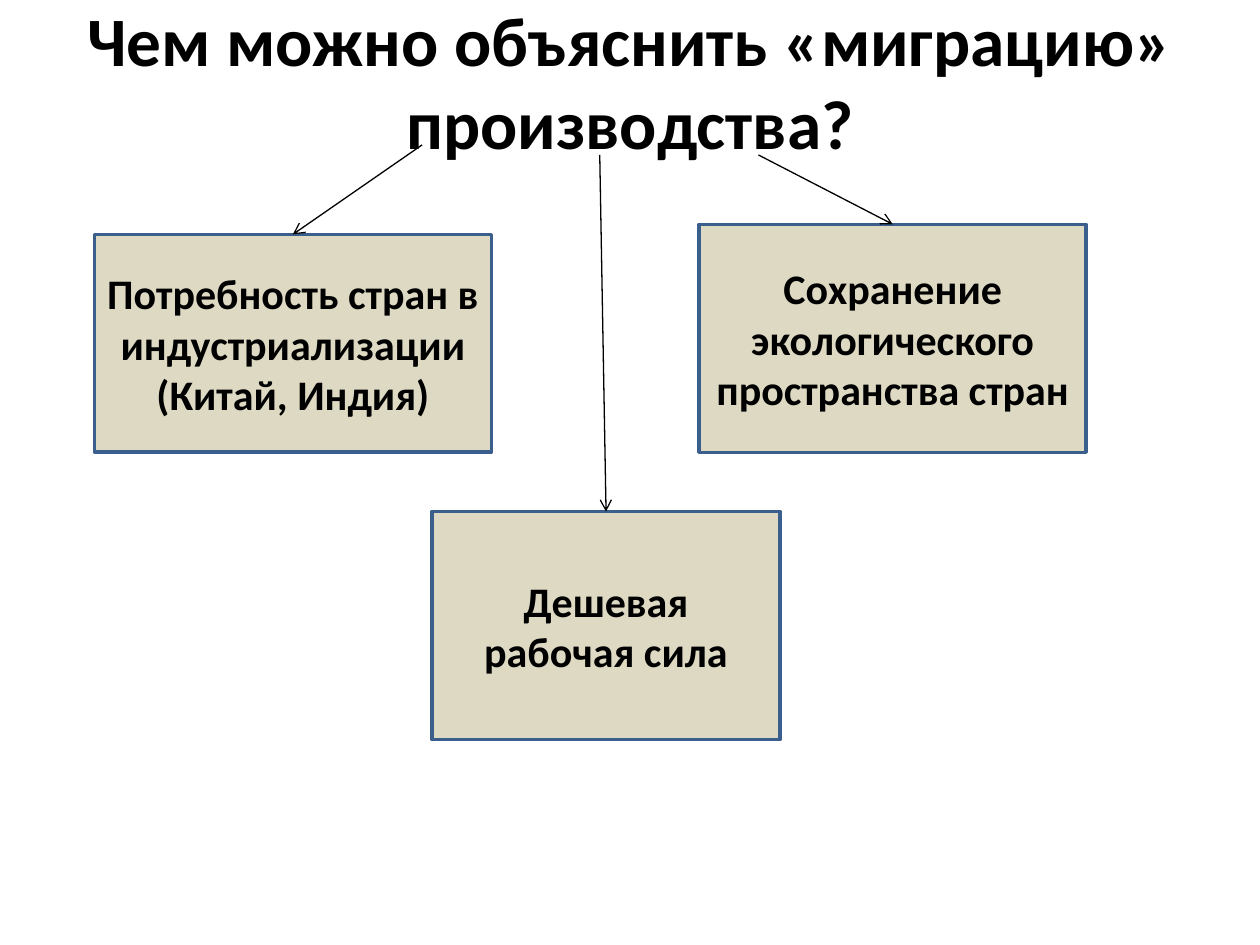
import pptx
import pptx.dml.color
import pptx.enum.shapes
import pptx.enum.text
import pptx.oxml
import pptx.oxml.ns
import pptx.util
from pptx.util import Inches

BLACK = "000000"
REASONS = [
    ("Потребность стран в индустриализации (Китай, Индия)",
     (0.75, 1.86, 3.15, 1.73), (3.35, 1.15)),
    ("Дешевая рабочая сила", (3.43, 4.06, 2.76, 1.81), (4.76, 1.23)),
    ("Сохранение экологического пространства стран",
     (5.55, 1.78, 3.07, 1.81), (6.02, 1.23)),
]


def set_color(color_format, value):
    color_format.rgb = pptx.dml.color.RGBColor.from_string(value)


def write_text(shape, text, size):
    frame = shape.text_frame
    frame.word_wrap = True
    frame.auto_size = pptx.enum.text.MSO_AUTO_SIZE.NONE
    frame.vertical_anchor = pptx.enum.text.MSO_ANCHOR.MIDDLE
    paragraph = frame.paragraphs[0]
    paragraph.alignment = pptx.enum.text.PP_ALIGN.CENTER
    run = paragraph.add_run()
    run.text = text
    run.font.name = "Calibri"
    run.font.size = pptx.util.Pt(size)
    run.font.bold = True
    run.font.fill.solid()
    set_color(run.font.fill.fore_color, BLACK)


def place_title(slide, box, text):
    title = slide.shapes.title
    title.left, title.top, title.width, title.height = map(Inches, box)
    write_text(title, text, 39.6)


def add_reason(slide, box, text):
    shape = slide.shapes.add_shape(
        pptx.enum.shapes.MSO_SHAPE.RECTANGLE, *map(Inches, box))
    shape.shadow.inherit = False
    shape.fill.solid()
    set_color(shape.fill.fore_color, "DDD9C3")
    set_color(shape.line.color, "3A5F8C")
    shape.line.width = pptx.util.Pt(2)
    write_text(shape, text, 24)
    return shape


def add_arrow(slide, start, target):
    x, y = map(Inches, start)
    connector = slide.shapes.add_connector(
        pptx.enum.shapes.MSO_CONNECTOR.STRAIGHT, x, y, x, y)
    connector.end_connect(target, 0)
    set_color(connector.line.color, BLACK)
    connector.line.width = pptx.util.Pt(0.75)
    tail = pptx.oxml.parse_xml(
        f'<a:tailEnd {pptx.oxml.ns.nsdecls("a")} type="arrow"/>')
    connector.line._get_or_add_ln().append(tail)
    effects = pptx.oxml.parse_xml(f'<a:effectLst {pptx.oxml.ns.nsdecls("a")}/>')
    connector._element.spPr.append(effects)


def main():
    presentation = pptx.Presentation()
    presentation.slide_width = Inches(10)
    presentation.slide_height = Inches(7.5)
    slide = presentation.slides.add_slide(presentation.slide_layouts[5])
    place_title(slide, (0.5, 0.13, 9, 1.02),
                "Чем можно объяснить «миграцию» производства?")
    shapes = [add_reason(slide, box, text) for text, box, start in REASONS]
    for shape, (text, box, start) in zip(shapes, REASONS):
        add_arrow(slide, start, shape)
    presentation.save("out.pptx")


if __name__ == "__main__":
    main()
